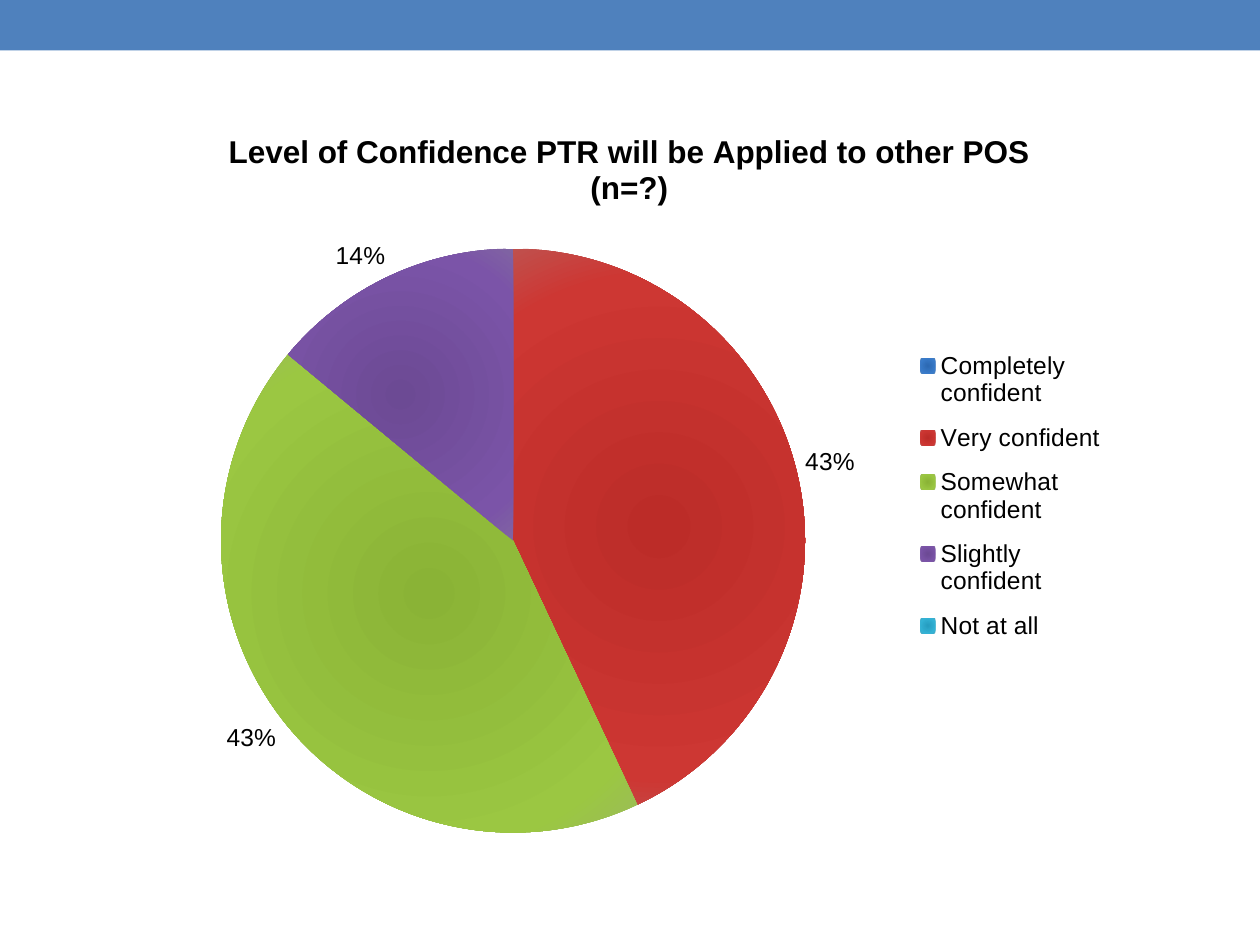
from dataclasses import dataclass

from lxml import etree
from pptx import Presentation
from pptx.chart.data import CategoryChartData
from pptx.dml.color import RGBColor
from pptx.enum.chart import XL_CHART_TYPE, XL_LABEL_POSITION, XL_LEGEND_POSITION
from pptx.enum.shapes import MSO_SHAPE
from pptx.oxml import parse_xml
from pptx.oxml.ns import nsdecls, qn
from pptx.util import Inches, Pt

WIDTH, HEIGHT = Inches(10), Inches(7.5)
FONT = "Arial"


@dataclass(frozen=True)
class Answer:
    label: str
    share: int
    centre: str
    middle: str
    edge: str


@dataclass(frozen=True)
class Area:
    """A place given as shares of its parent's size."""
    x: float
    y: float
    w: float
    h: float


ANSWERS = [
    Answer("Completely confident", 0, "2C69B2", "3A7CCB", "4F81BD"),
    Answer("Very confident", 43, "BC2C28", "CD3733", "C0504D"),
    Answer("Somewhat confident", 43, "8AB336", "9BC742", "9BBB59"),
    Answer("Slightly confident", 14, "6C4A94", "7B54A8", "8064A2"),
    Answer("Not at all", 0, "269DC0", "34B3D6", "4BACC6"),
]
BANNER = Area(0, 0, 1, 0.4 / 7.5)
CHART = Area(0.058, 0.11, 0.883, 0.79)
PIE = Area(0.133, 0.193, 0.525, 0.784)
LEGEND = Area(0.755, 0.31, 0.175, 0.43)


def colour(value: str) -> RGBColor:
    return RGBColor.from_string(value)


def place(area: Area) -> tuple[int, int, int, int]:
    return (int(area.x * WIDTH), int(area.y * HEIGHT),
            int(area.w * WIDTH), int(area.h * HEIGHT))


def style_font(font, size: float, bold: bool = False, tint: str = "000000") -> None:
    font.name, font.size, font.bold = FONT, Pt(size), bold
    font.color.rgb = colour(tint)


def write(frame, text: str, **style) -> None:
    frame.text = text
    style_font(frame.paragraphs[0].runs[0].font, **style)


def set_layout(parent, area: Area, before: tuple[str, ...], inner: bool = False) -> None:
    """Give a chart part a fixed place, ahead of the named children."""
    for old in parent.findall(qn("c:layout")):
        parent.remove(old)
    target = '<c:layoutTarget val="inner"/>' if inner else ""
    modes = '<c:xMode val="edge"/><c:yMode val="edge"/>'
    sizes = "".join(f'<c:{key} val="{getattr(area, key)}"/>' for key in "xywh")
    layout = parse_xml(f'<c:layout {nsdecls("c")}><c:manualLayout>'
                       f'{target}{modes}{sizes}</c:manualLayout></c:layout>')
    next(child for child in parent if child.tag in map(qn, before)).addprevious(layout)


def fill_radial(point, answer: Answer) -> None:
    """Shade a slice from its centre outwards."""
    point.format.fill.solid()
    stops = [(0, answer.centre), (80, answer.middle), (100, answer.edge)]
    stop_xml = "".join(f'<a:gs pos="{pos * 1000}"><a:srgbClr val="{tint}"/></a:gs>'
                       for pos, tint in stops)
    gradient = parse_xml(
        f'<a:gradFill {nsdecls("a")} rotWithShape="1"><a:gsLst>{stop_xml}</a:gsLst>'
        '<a:path path="circle"><a:fillToRect l="50000" t="50000" r="50000" b="50000"/>'
        '</a:path></a:gradFill>')
    solid = next(point.format.fill._xPr.iter(qn("a:solidFill")))
    solid.getparent().replace(solid, gradient)
    point.format.line.fill.background()


def hide_label(labels, index: int) -> None:
    hidden = etree.Element(qn("c:dLbl"))
    etree.SubElement(hidden, qn("c:idx")).set("val", str(index))
    etree.SubElement(hidden, qn("c:delete")).set("val", "1")
    position = len(labels._element.findall(qn("c:dLbl")))
    labels._element.insert(position, hidden)


def add_banner(slide) -> None:
    banner = slide.shapes.add_shape(MSO_SHAPE.RECTANGLE, *place(BANNER))
    banner.shadow.inherit = False
    banner.fill.solid()
    banner.fill.fore_color.rgb = colour("4F81BD")
    banner.line.fill.background()


def add_confidence_pie(slide) -> None:
    data = CategoryChartData()
    data.categories = [answer.label for answer in ANSWERS]
    data.add_series("Series 1", [answer.share for answer in ANSWERS])
    chart = slide.shapes.add_chart(XL_CHART_TYPE.PIE, *place(CHART), data).chart
    style_font(chart.font, size=10)

    # Title
    chart.has_title = True
    write(chart.chart_title.text_frame,
          "Level of Confidence PTR will be Applied to other POS (n=?)",
          size=18, bold=True)
    chart.chart_title.include_in_layout = False

    # Legend
    chart.has_legend = True
    chart.legend.position = XL_LEGEND_POSITION.RIGHT
    chart.legend.include_in_layout = False
    style_font(chart.legend.font, size=14)
    set_layout(chart.legend._element, LEGEND, ("c:overlay",))

    # Slices and percentages
    plot = chart.plots[0]
    plot.vary_by_categories = True
    set_layout(plot._element.getparent(), PIE, ("c:pieChart",), inner=True)
    series = plot.series[0]
    labels = series.data_labels
    labels.show_percentage, labels.show_value = True, False
    labels.number_format, labels.number_format_is_linked = "0%", False
    labels.position = XL_LABEL_POSITION.OUTSIDE_END
    style_font(labels.font, size=14)
    for index, answer in enumerate(ANSWERS):
        fill_radial(series.points[index], answer)
        if answer.share == 0:
            hide_label(labels, index)


def main() -> None:
    deck = Presentation()
    deck.slide_width, deck.slide_height = WIDTH, HEIGHT
    slide = deck.slides.add_slide(deck.slide_layouts[6])
    add_banner(slide)
    add_confidence_pie(slide)
    deck.save("out.pptx")


if __name__ == "__main__":
    main()
